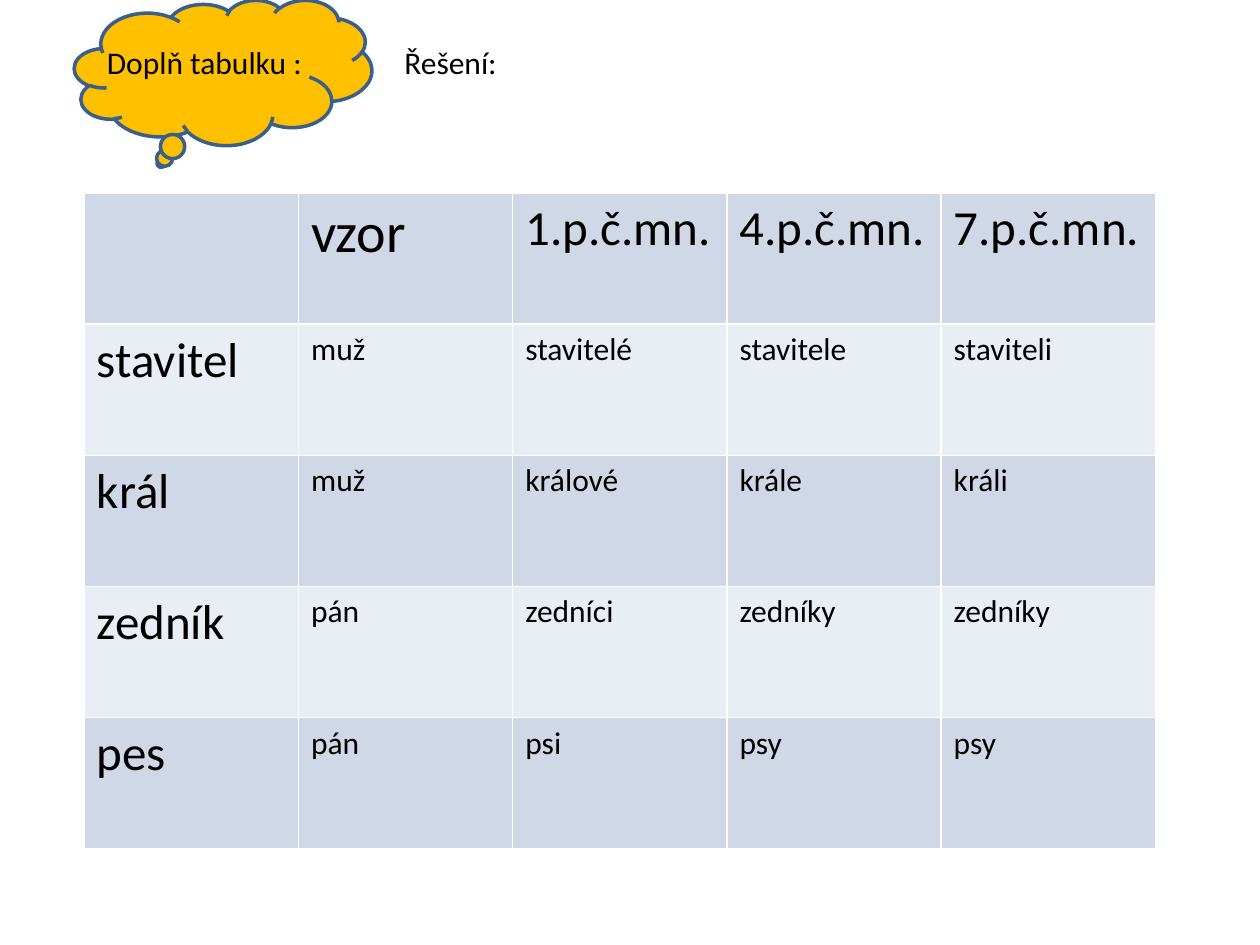
"""Build a Czech grammar slide with a solved declension table."""
from dataclasses import dataclass

from lxml import etree
from pptx import Presentation
from pptx.dml.color import RGBColor
from pptx.enum.shapes import MSO_SHAPE
from pptx.oxml.ns import qn
from pptx.util import Pt

CLOUD = MSO_SHAPE.CLOUD_CALLOUT


@dataclass(frozen=True)
class Theme:
    font: str = "Calibri"
    text: str = "000000"
    cloud: str = "FFC000"
    outline: str = "3A5F8C"
    border: str = "FFFFFF"
    bands: tuple = ("D0D8E8", "E9EDF4")
    body: int = 18
    heading: int = 28
    title: int = 32


class SlideBuilder:
    def __init__(self, slide, theme):
        self.slide = slide
        self.theme = theme

    def set_text(self, frame, text, size):
        paragraph = frame.paragraphs[0]
        paragraph.text = text
        font = paragraph.font
        font.name = self.theme.font
        font.size = Pt(size)
        font.bold = False
        font.color.rgb = RGBColor.from_string(self.theme.text)

    def cloud(self, left, top, width, height):
        cloud = self.slide.shapes.add_shape(CLOUD, Pt(left), Pt(top), Pt(width), Pt(height))
        cloud.shadow.inherit = False
        cloud.fill.solid()
        cloud.fill.fore_color.rgb = RGBColor.from_string(self.theme.cloud)
        cloud.line.color.rgb = RGBColor.from_string(self.theme.outline)
        cloud.line.width = Pt(2)

    def label(self, text, left, top, width, height):
        label = self.slide.shapes.add_textbox(Pt(left), Pt(top), Pt(width), Pt(height))
        label.text_frame.word_wrap = True
        self.set_text(label.text_frame, text, self.theme.body)

    def border(self, cell):
        properties = cell._tc.get_or_add_tcPr()
        for side in ("a:lnL", "a:lnR", "a:lnT", "a:lnB"):
            line = etree.SubElement(properties, qn(side), w=str(Pt(1)))
            fill = etree.SubElement(line, qn("a:solidFill"))
            etree.SubElement(fill, qn("a:srgbClr"), val=self.theme.border)

    def text_size(self, row, column):
        if (row, column) == (0, 1):
            return self.theme.title
        return self.theme.body if row and column else self.theme.heading

    def table(self, rows, left, top, column_width, row_height):
        count = len(rows[0])
        table = self.slide.shapes.add_table(
            len(rows), count, Pt(left), Pt(top),
            Pt(column_width * count), Pt(row_height * len(rows))).table
        for column in table.columns:
            column.width = Pt(column_width)
        for r, words in enumerate(rows):
            table.rows[r].height = Pt(row_height)
            for c, word in enumerate(words):
                cell = table.cell(r, c)
                self.border(cell)
                cell.fill.solid()
                cell.fill.fore_color.rgb = RGBColor.from_string(self.theme.bands[r % 2])
                self.set_text(cell.text_frame, word, self.text_size(r, c))


def main():
    declensions = [
        ("", "vzor", "1.p.č.mn.", "4.p.č.mn.", "7.p.č.mn."),
        ("stavitel", "muž", "stavitelé", "stavitele", "staviteli"),
        ("král", "muž", "králové", "krále", "králi"),
        ("zedník", "pán", "zedníci", "zedníky", "zedníky"),
        ("pes", "pán", "psi", "psy", "psy"),
    ]
    presentation = Presentation()
    presentation.slide_width = Pt(720)
    presentation.slide_height = Pt(540)
    slide = presentation.slides.add_slide(presentation.slide_layouts[6])
    builder = SlideBuilder(slide, Theme())
    builder.cloud(42.5, 0, 170, 83)
    builder.table(declensions, 48.2, 110.2, 122.4, 75)
    builder.label("Doplň tabulku :", 54, 21, 504.7, 29)
    builder.label("Řešení:", 224, 21, 113, 29)
    presentation.save("out.pptx")


if __name__ == "__main__":
    main()
